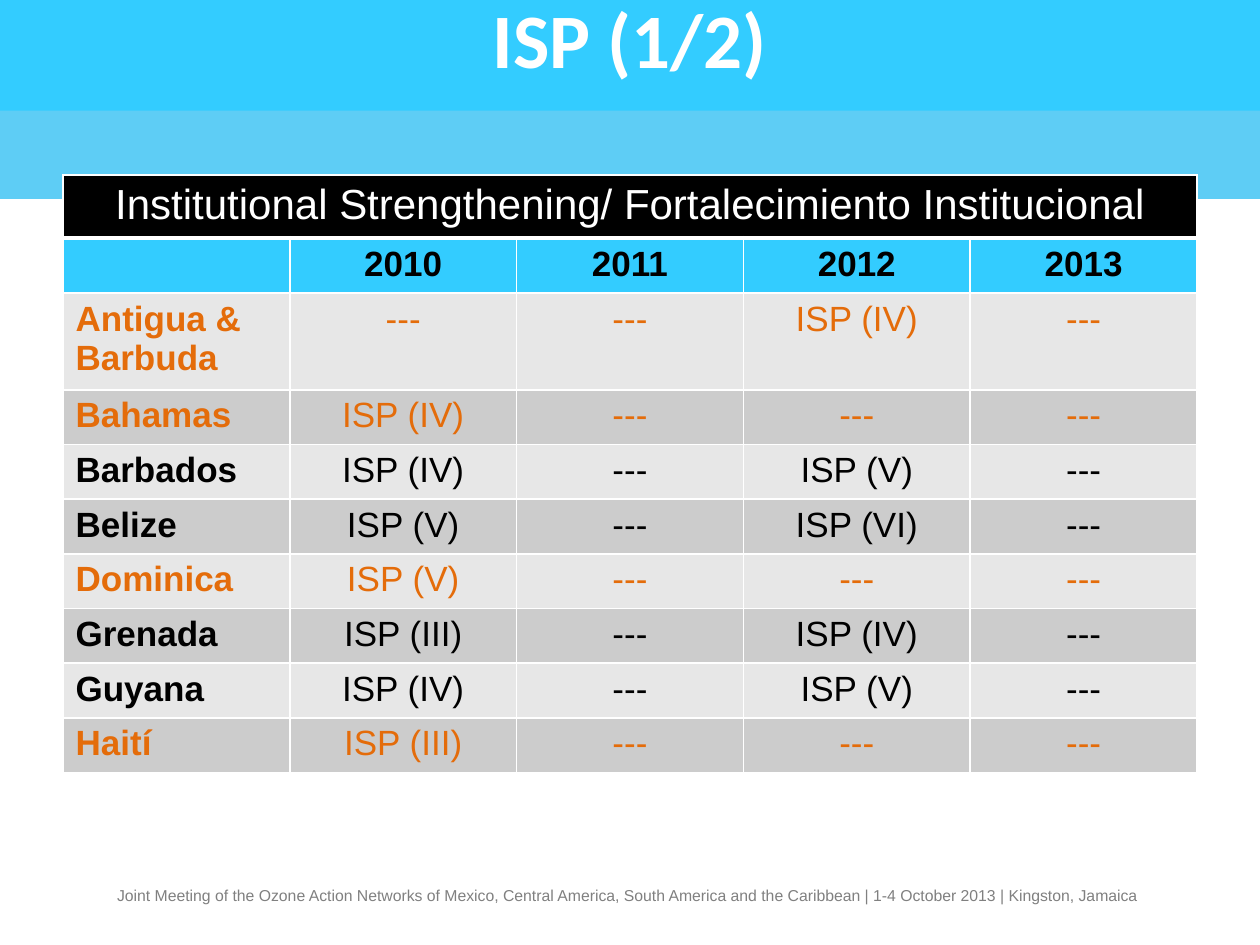
from lxml.etree import SubElement
from pptx import Presentation
from pptx.dml.color import RGBColor
from pptx.enum.shapes import MSO_SHAPE
from pptx.enum.text import MSO_ANCHOR, PP_ALIGN
from pptx.oxml.ns import qn
from pptx.util import Cm, Pt

WHITE = RGBColor(0xFF, 0xFF, 0xFF)
BLACK = RGBColor(0x00, 0x00, 0x00)
GREY = RGBColor(0x80, 0x80, 0x80)
SKY = RGBColor(0x33, 0xCC, 0xFF)
BLUE = RGBColor(0x00, 0xB0, 0xF0)
ORANGE = RGBColor(0xE4, 0x6C, 0x0A)
LIGHT = RGBColor(0xE7, 0xE7, 0xE7)
DARK = RGBColor(0xCC, 0xCC, 0xCC)

NONE = "---"
YEARS = ["2010", "2011", "2012", "2013"]
ROWS = [
    ("Antigua & Barbuda", ORANGE, [NONE, NONE, "ISP (IV)", NONE]),
    ("Bahamas", ORANGE, ["ISP (IV)", NONE, NONE, NONE]),
    ("Barbados", BLACK, ["ISP (IV)", NONE, "ISP (V)", NONE]),
    ("Belize", BLACK, ["ISP (V)", NONE, "ISP (VI)", NONE]),
    ("Dominica", ORANGE, ["ISP (V)", NONE, NONE, NONE]),
    ("Grenada", BLACK, ["ISP (III)", NONE, "ISP (IV)", NONE]),
    ("Guyana", BLACK, ["ISP (IV)", NONE, "ISP (V)", NONE]),
    ("Haití", ORANGE, ["ISP (III)", NONE, NONE, NONE]),
]


def write(frame, text, size, color, bold=False, align=PP_ALIGN.CENTER, face="Arial"):
    para = frame.paragraphs[0]
    para.alignment = align
    run = para.add_run()
    run.text = text
    font = run.font
    font.name, font.size, font.bold = face, Pt(size), bold
    font.color.rgb = color


def add_band(slide, box, color, alpha=None):
    """Add a plain rectangle; alpha is its opacity in percent."""
    band = slide.shapes.add_shape(MSO_SHAPE.RECTANGLE, *box)
    band.shadow.inherit = False
    band.line.fill.background()
    band.fill.solid()
    band.fill.fore_color.rgb = color
    if alpha:
        tint = band.fill._xPr.find(qn("a:solidFill"))[0]
        SubElement(tint, qn("a:alpha"), val=str(alpha * 1000))
    return band


def add_title(slide, box):
    frame = add_band(slide, box, SKY).text_frame
    frame.word_wrap = True
    frame.vertical_anchor = MSO_ANCHOR.MIDDLE
    write(frame, "ISP (1/2)", 44, WHITE, bold=True, face="Calibri")


def add_footer(slide, box):
    frame = slide.shapes.add_textbox(*box).text_frame
    frame.word_wrap = True
    write(frame, "Joint Meeting of the Ozone Action Networks of Mexico, Central America, "
          "South America and the Caribbean | 1-4 October 2013 | Kingston, Jamaica",
          9, GREY, align=PP_ALIGN.LEFT)


def paint(cell, color, base=1):
    """Fill a cell and edge it in white; base is the bottom line's width."""
    props = cell._tc.get_or_add_tcPr()
    for side, width in (("L", 1), ("R", 1), ("T", 1), ("B", base)):
        edge = SubElement(props, qn(f"a:ln{side}"), w=str(Pt(width)))
        SubElement(SubElement(edge, qn("a:solidFill")), qn("a:srgbClr"), val=str(WHITE))
    cell.fill.solid()
    cell.fill.fore_color.rgb = color


def add_grid(slide, box):
    left, top, width, height = box
    count = len(YEARS) + 1
    table = slide.shapes.add_table(len(ROWS) + 2, count, left, top, width, height).table
    for col in table.columns:
        col.width = width // count
    for row in table.rows:
        row.height = Cm(1.08)
    for index, tall in enumerate((1.21, 1.11, 1.9)):
        table.rows[index].height = Cm(tall)

    for cell in table.rows[0].cells:
        paint(cell, BLACK, base=3)
    head = table.cell(0, 0)
    head.merge(table.cell(0, count - 1))
    write(head.text_frame, "Institutional Strengthening/ Fortalecimiento Institucional", 24, WHITE)

    for cell in table.rows[1].cells:
        paint(cell, SKY)
    for col, year in enumerate(YEARS, 1):
        write(table.cell(1, col).text_frame, year, 20, BLACK, bold=True)

    for index, (name, color, marks) in enumerate(ROWS):
        for col, text in enumerate([name, *marks]):
            cell = table.cell(index + 2, col)
            paint(cell, DARK if index % 2 else LIGHT)
            align = PP_ALIGN.CENTER if col else PP_ALIGN.LEFT
            write(cell.text_frame, text, 20, color, bold=col == 0, align=align)


def main():
    deck = Presentation()
    deck.slide_width, deck.slide_height = Cm(25.4), Cm(19.05)
    slide = deck.slides.add_slide(deck.slide_layouts[6])
    add_band(slide, (0, 0, deck.slide_width, Cm(4.01)), BLUE, alpha=63)
    add_footer(slide, (Cm(2.11), Cm(17.73), Cm(21.41), Cm(0.64)))
    add_title(slide, (0, Cm(-0.69), deck.slide_width, Cm(2.92)))
    add_grid(slide, (Cm(1.27), Cm(3.53), Cm(22.86), Cm(11.8)))
    deck.save("out.pptx")


if __name__ == "__main__":
    main()
